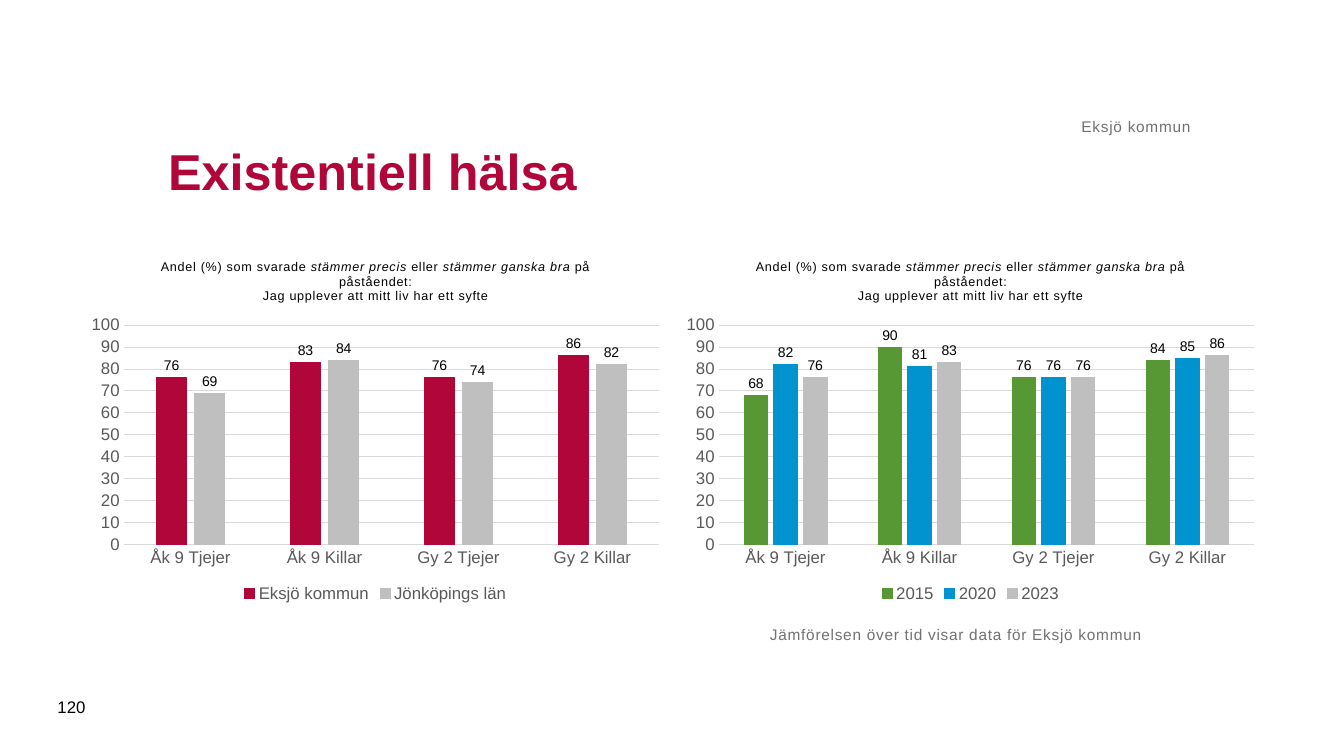
from dataclasses import dataclass

from lxml import etree
from pptx import Presentation
from pptx.chart.data import CategoryChartData
from pptx.dml.color import RGBColor
from pptx.enum.chart import (XL_CHART_TYPE, XL_LABEL_POSITION,
                             XL_LEGEND_POSITION, XL_TICK_MARK)
from pptx.enum.text import MSO_ANCHOR, PP_ALIGN
from pptx.oxml.ns import qn
from pptx.util import Pt


@dataclass(frozen=True)
class Theme:
    font: str = "Arial"
    # Colours
    crimson: str = "B1063A"
    green: str = "579835"
    blue: str = "0093D0"
    silver: str = "BFBFBF"
    grid: str = "D9D9D9"
    axis: str = "595959"
    note: str = "717171"
    black: str = "000000"
    # Type sizes
    heading: float = 36
    label: float = 12
    caption: float = 11
    value: float = 10
    chart_title: float = 9
    spacing: int = 50  # hundredths of a point


class SlideBuilder:
    def __init__(self, slide, theme):
        self.s = slide
        self.t = theme

    def style(self, font, size, color, bold=False):
        font.name = self.t.font
        font.size = Pt(size)
        font.bold = bold
        font.color.rgb = RGBColor.from_string(color)

    def line(self, fmt, color):
        fmt.color.rgb = RGBColor.from_string(color)
        fmt.width = Pt(0.75)

    def space_letters(self, r):
        r.font._element.set("spc", str(self.t.spacing))

    def text(self, text, box, size, color, bold=False, spaced=False,
             inset=None, anchor=MSO_ANCHOR.TOP, align=PP_ALIGN.LEFT):
        tf = self.s.shapes.add_textbox(*map(Pt, box)).text_frame
        tf.word_wrap = True
        tf.vertical_anchor = anchor
        if inset is not None:
            tf.margin_left = tf.margin_right = Pt(inset)
            tf.margin_top = tf.margin_bottom = Pt(inset)
        p = tf.paragraphs[0]
        p.text = text
        p.alignment = align
        self.style(p.runs[0].font, size, color, bold)
        if spaced:
            self.space_letters(p.runs[0])

    def chart(self, box, title, categories, series):
        t = self.t
        data = CategoryChartData(number_format="#,##0;#,##0")
        data.categories = categories
        for name, _, values in series:
            data.add_series(name, values)
        chart = self.s.shapes.add_chart(
            XL_CHART_TYPE.COLUMN_CLUSTERED, *map(Pt, box), data).chart
        self.style(chart.font, t.value, t.black)
        self.chart_title(chart, title)
        self.axes(chart)

        # Legend
        chart.has_legend = True
        chart.legend.position = XL_LEGEND_POSITION.BOTTOM
        chart.legend.include_in_layout = False
        self.style(chart.legend.font, t.label, t.axis)

        # Columns and their values
        plot = chart.plots[0]
        plot.gap_width = 219
        plot.overlap = -27
        plot.vary_by_categories = False
        for ser, (_, color, _) in zip(plot.series, series):
            ser.format.fill.solid()
            ser.format.fill.fore_color.rgb = RGBColor.from_string(color)
            self.line(ser.format.line, color)
            labels = ser.data_labels
            labels.show_value = True
            labels.position = XL_LABEL_POSITION.OUTSIDE_END
            labels.number_format = "#,##0;#,##0"
            labels.number_format_is_linked = False
            self.style(labels.font, t.value, t.black)

    def chart_title(self, chart, lines):
        chart.has_title = True
        title = chart.chart_title
        title.include_in_layout = False
        tf = title.text_frame
        for i, parts in enumerate(lines):
            p = tf.add_paragraph() if i else tf.paragraphs[0]
            p.alignment = PP_ALIGN.CENTER
            for text, italic in parts:
                r = p.add_run()
                r.text = text
                self.style(r.font, self.t.chart_title, self.t.black)
                r.font.italic = italic
                self.space_letters(r)

    def axes(self, chart):
        t = self.t
        for axis in (chart.category_axis, chart.value_axis):
            axis.major_tick_mark = XL_TICK_MARK.NONE
            axis.minor_tick_mark = XL_TICK_MARK.NONE
            self.style(axis.tick_labels.font, t.label, t.axis)
        self.line(chart.category_axis.format.line, t.grid)
        val = chart.value_axis
        val.minimum_scale, val.maximum_scale, val.major_unit = 0, 100, 10
        val.tick_labels.number_format = "#,##0;#,##0"
        val.tick_labels.number_format_is_linked = False
        val.format.line.fill.background()
        val.has_major_gridlines = True
        self.line(val.major_gridlines.format.line, t.grid)


def main():
    prs = Presentation()
    prs.slide_width, prs.slide_height = Pt(960), Pt(540)
    theme = Theme()
    slide = SlideBuilder(prs.slides.add_slide(prs.slide_layouts[6]), theme)

    # Charts: comparison with the county, and over time
    question = [
        [("Andel (%) som svarade ", False), ("stämmer precis", True),
         (" eller ", False), ("stämmer ganska bra", True),
         (" på påståendet:", False)],
        [("Jag upplever att mitt liv har ett syfte", False)],
    ]
    groups = ["Åk 9 Tjejer", "Åk 9 Killar", "Gy 2 Tjejer", "Gy 2 Killar"]
    by_area = [("Eksjö kommun", theme.crimson, (76, 83, 76, 86)),
               ("Jönköpings län", theme.silver, (69, 84, 74, 82))]
    by_year = [("2015", theme.green, (68, 90, 76, 84)),
               ("2020", theme.blue, (82, 81, 76, 85)),
               ("2023", theme.silver, (76, 83, 76, 86))]
    for i, series in enumerate((by_area, by_year)):
        slide.chart((57 + 425 * i, 173, 422.5, 260.5), question, groups, series)

    # Heading, municipality, note and page number
    slide.text("Existentiell hälsa", (113, 70.5, 737.5, 102), theme.heading,
               theme.crimson, bold=True, anchor=MSO_ANCHOR.MIDDLE)
    slide.text("Jämförelsen över tid visar data för Eksjö kommun",
               (550, 446.5, 382.5, 67.5), theme.caption, theme.note,
               spaced=True, inset=0)
    slide.text("Eksjö kommun", (113, 44.5, 737.5, 52.5), theme.caption,
               theme.note, spaced=True, inset=0, anchor=MSO_ANCHOR.BOTTOM,
               align=PP_ALIGN.RIGHT)
    slide.text("120", (34, 490.5, 41, 29), theme.label, theme.black,
               anchor=MSO_ANCHOR.MIDDLE)

    prs.save("out.pptx")


if __name__ == "__main__":
    main()
